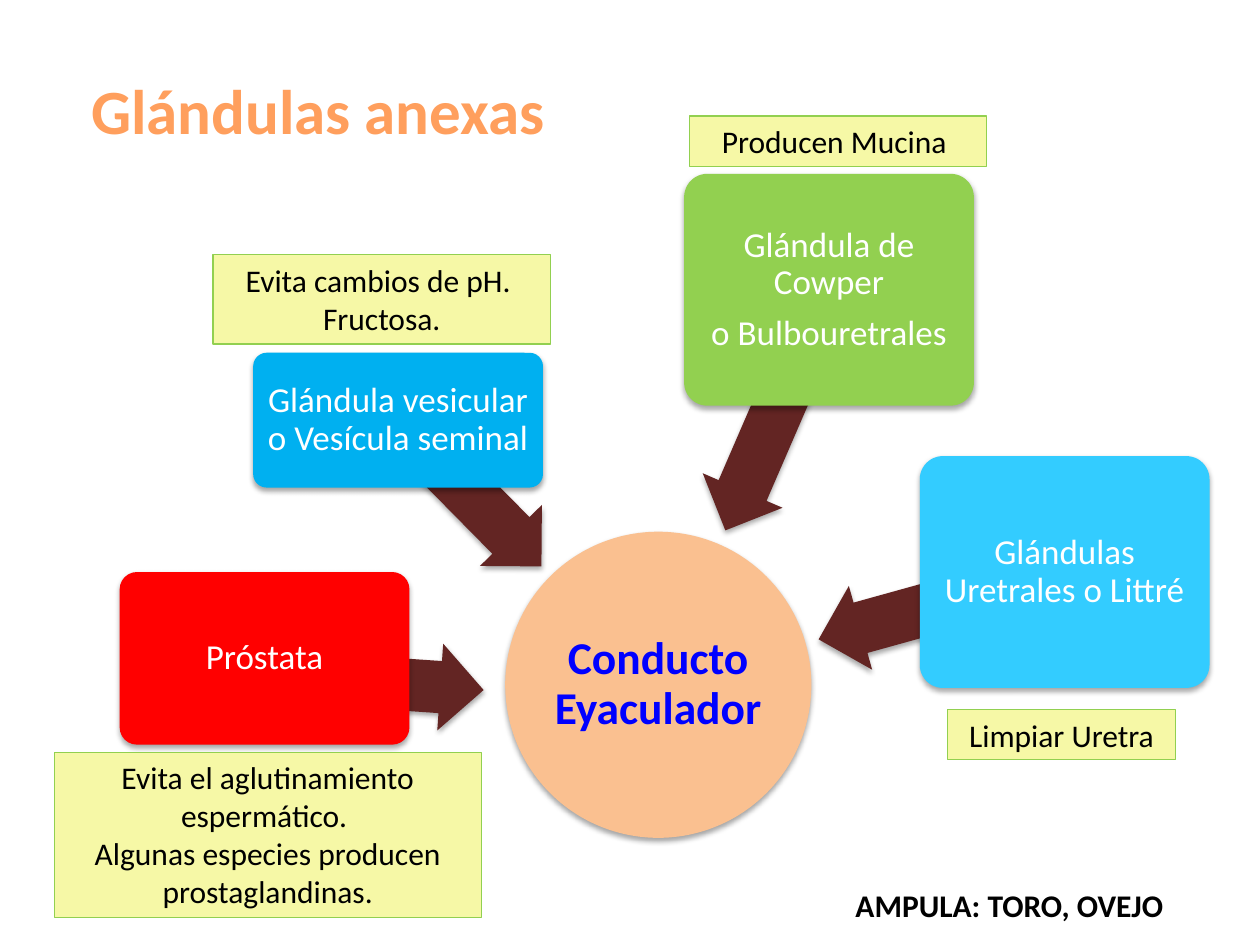
import pptx
import pptx.util
import pptx.dml.color
import pptx.enum.shapes
import pptx.enum.text
import pptx.oxml
import pptx.oxml.ns

Inches = pptx.util.Inches
Pt = pptx.util.Pt
KIND = pptx.enum.shapes.MSO_SHAPE
ALIGN = pptx.enum.text.PP_ALIGN
ANCHOR = pptx.enum.text.MSO_ANCHOR

COLORS = {
    "title": "FF9F5D", "duct": "FAC090", "blue": "0000FF", "arrow": "632523",
    "red": "FF0000", "azure": "00B0F0", "green": "92D050", "sky": "33CCFF",
    "note": "F6F8A6", "black": "000000", "white": "FFFFFF",
}

GLANDS = [
    ((0.95, 4.54, 2.3, 1.37), "red", "Próstata", (2.03, 5.07, 1.81), 183.9),
    ((2.01, 2.8, 2.3, 1.07), "azure", "Glándula vesicular o Vesícula seminal",
     (2.91, 3.57, 1.63), 225.4),
    ((5.43, 1.38, 2.3, 1.84), "green", "Glándula de Cowper\no Bulbouretrales",
     (5.13, 2.91, 2.08), 293.4),
    ((7.3, 3.62, 2.3, 1.84), "sky", "Glándulas Uretrales o Littré",
     (6.46, 4.46, 2.02), 344.5),
]

NOTES = [
    ((0.43, 5.97, 3.39, 1.31),
     "Evita el aglutinamiento espermático. \nAlgunas especies producen prostaglandinas."),
    ((1.69, 2.02, 2.68, 0.71), "Evita cambios de pH. \nFructosa."),
    ((5.47, 0.92, 2.36, 0.4), "Producen Mucina "),
    ((7.52, 5.63, 1.81, 0.4), "Limpiar Uretra"),
]


def color(name):
    """Return the named colour."""
    return pptx.dml.color.RGBColor.from_string(COLORS[name])


def write(frame, text, size, ink, bold=False, tight=False):
    """Fill a frame with centred, formatted paragraphs."""
    frame.text = text
    for par in frame.paragraphs:
        par.alignment = ALIGN.CENTER
        if tight:
            par.line_spacing = 0.9
            par.space_after = Pt(size * 0.35)
        for run in par.runs:
            run.font.name = "Calibri"
            run.font.size = Pt(size)
            run.font.bold = bold
            run.font.color.rgb = color(ink)


def inset(frame, gap):
    """Give a frame equal margins and middle anchoring."""
    frame.margin_left = frame.margin_right = Inches(gap)
    frame.margin_top = frame.margin_bottom = Inches(gap)
    frame.vertical_anchor = ANCHOR.MIDDLE
    frame.word_wrap = True


def shade(shape):
    """Add a soft shadow below a shape."""
    shape.shadow.inherit = False
    effects = shape._element.spPr.find(pptx.oxml.ns.qn("a:effectLst"))
    effects.append(pptx.oxml.parse_xml(
        f'<a:outerShdw {pptx.oxml.ns.nsdecls("a")} blurRad="{Pt(3.1)}" '
        f'dist="{Pt(1.8)}" dir="5400000" rotWithShape="0"><a:srgbClr val="000000">'
        '<a:alpha val="35000"/></a:srgbClr></a:outerShdw>'))


def draw(shapes, kind, box, fill):
    """Draw a filled shape without line or shadow."""
    shape = shapes.add_shape(kind, *map(Inches, box))
    shape.shadow.inherit = False
    shape.fill.solid()
    shape.fill.fore_color.rgb = color(fill)
    shape.line.fill.background()
    return shape


def add_title(slide, box):
    """Place the slide title."""
    title = slide.shapes.title
    title.left, title.top, title.width, title.height = map(Inches, box)
    write(title.text_frame, "Glándulas anexas", 36, "title", bold=True)
    title.text_frame.word_wrap = False
    title.text_frame.vertical_anchor = ANCHOR.TOP


def add_duct(shapes, box):
    """Draw the central duct."""
    duct = draw(shapes, KIND.OVAL, box, "duct")
    shade(duct)
    inset(duct.text_frame, 0.02)
    write(duct.text_frame, "Conducto Eyaculador", 26, "blue", bold=True, tight=True)


def add_gland(shapes, box, fill, text, start, angle):
    """Draw a gland over its arrow to the duct."""
    arrow = draw(shapes, KIND.LEFT_ARROW, (*start, 0.69), "arrow")
    arrow.adjustments[0] = 0.6
    arrow.adjustments[1] = 0.5
    arrow.rotation = angle
    shade(arrow)
    gland = draw(shapes, KIND.ROUNDED_RECTANGLE, box, fill)
    gland.adjustments[0] = 0.1
    shade(gland)
    inset(gland.text_frame, 0.04)
    write(gland.text_frame, text, 20, "white", tight=True)


def add_note(shapes, box, text):
    """Draw a bordered note on a gland's function."""
    note = draw(shapes, KIND.RECTANGLE, box, "note")
    note.line.color.rgb = color("green")
    note.line.width = Pt(0.75)
    note.text_frame.word_wrap = True
    note.text_frame.vertical_anchor = ANCHOR.TOP
    write(note.text_frame, text, 18, "black")


def add_label(shapes, box):
    """Place the closing remark."""
    frame = shapes.add_textbox(*map(Inches, box)).text_frame
    frame.word_wrap = False
    write(frame, "AMPULA: TORO, OVEJO ", 18, "black", bold=True)


def main():
    """Build and save the slide."""
    deck = pptx.Presentation()
    deck.slide_width, deck.slide_height = Inches(10), Inches(7.5)
    slide = deck.slides.add_slide(deck.slide_layouts[5])
    add_title(slide, (0.28, 0.52, 4.49, 0.71))
    cycle = slide.shapes.add_group_shape().shapes
    add_duct(cycle, (4.01, 4.22, 2.43, 2.43))
    for gland in GLANDS:
        add_gland(cycle, *gland)
    for note in NOTES:
        add_note(slide.shapes, *note)
    add_label(slide.shapes, (6.42, 6.98, 3.24, 0.4))
    deck.save("out.pptx")


if __name__ == "__main__":
    main()
